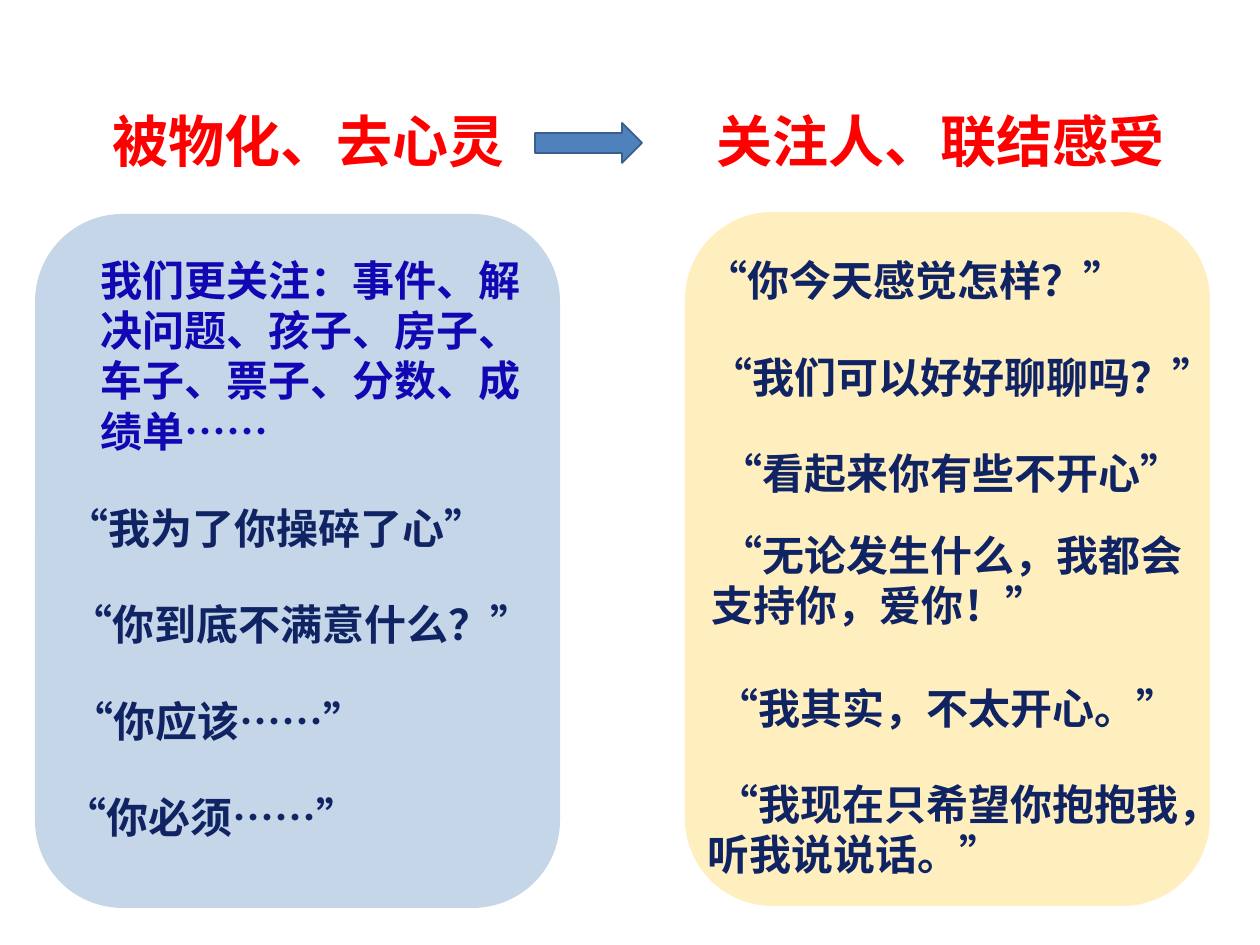
import pptx
import pptx.dml.color
import pptx.enum.shapes
import pptx.enum.text
import pptx.oxml.ns
import pptx.util
import lxml.etree

PX = 914400 // 126
THEME = {
    "font": "Noto Sans CJK SC",
    "heading": ("FF0000", 32),
    "focus": ("1307B3", 24),
    "quote": ("102464", 24),
    "left_panel": "84A8D1",
    "right_panel": "FFDE77",
    "panel_alpha": 47000,
    "arrow": "4F81BD",
    "arrow_line": "3A5F8C",
}
qn = pptx.oxml.ns.qn
rgb = pptx.dml.color.RGBColor.from_string
SHAPES = pptx.enum.shapes.MSO_SHAPE

presentation = pptx.Presentation()
presentation.slide_width = 1260 * PX
presentation.slide_height = 945 * PX
slide = presentation.slides.add_slide(presentation.slide_layouts[6])


def add_filled_shape(kind, left, top, width, height, color):
    shape = slide.shapes.add_shape(kind, left * PX, top * PX, width * PX, height * PX)
    shape.shadow.inherit = False
    shape.fill.solid()
    shape.fill.fore_color.rgb = rgb(color)
    return shape


def add_text(left, top, width, height, style, text):
    color, size = THEME[style]
    box = slide.shapes.add_textbox(left * PX, top * PX, width * PX, height * PX)
    box.text_frame.word_wrap = True
    box.text_frame.auto_size = pptx.enum.text.MSO_AUTO_SIZE.NONE
    paragraph = box.text_frame.paragraphs[0]
    paragraph.text = text
    font = paragraph.font
    font.name = THEME["font"]
    font.size = pptx.util.Pt(size)
    font.bold = True
    font.color.rgb = rgb(color)
    # Chinese glyphs take the East Asian typeface
    defaults = paragraph._p.pPr.find(qn("a:defRPr"))
    lxml.etree.SubElement(defaults, qn("a:ea"), typeface=THEME["font"])


# Translucent panels
for left, top, color in ((685, 212, "right_panel"), (35, 214, "left_panel")):
    panel = add_filled_shape(SHAPES.ROUNDED_RECTANGLE, left, top, 525, 694, THEME[color])
    panel.line.fill.background()
    color_element = panel._element.spPr.find(qn("a:solidFill"))[0]
    lxml.etree.SubElement(color_element, qn("a:alpha"), val=str(THEME["panel_alpha"]))

# Headings and the arrow between them
add_text(100, 100, 452, 149, "heading", "被物化、去心灵")
add_text(704, 100, 522, 149, "heading", "关注人、联结感受")
arrow = add_filled_shape(SHAPES.RIGHT_ARROW, 535, 123, 107, 40, THEME["arrow"])
arrow.line.color.rgb = rgb(THEME["arrow_line"])
arrow.line.width = pptx.util.Pt(1)

# What gets the attention
add_text(88, 248, 476, 217, "focus", "我们更关注：事件、解决问题、孩子、房子、车子、票子、分数、成绩单……")

# Quotes: left, top, width, height, text
quotes = (
    (45, 496, 600, 63, " “我为了你操碎了心”"),
    (49, 592, 919, 63, " “你到底不满意什么？”"),
    (50, 689, 919, 63, " “你应该……”"),
    (43, 785, 919, 63, " “你必须……”"),
    (684, 248, 600, 63, " “你今天感觉怎样？”"),
    (689, 345, 919, 63, " “我们可以好好聊聊吗？”"),
    (699, 441, 524, 63, " “看起来你有些不开心”"),
    (699, 523, 512, 115, " “无论发生什么，我都会支持你，爱你！”"),
    (695, 676, 919, 63, " “我其实，不太开心。”"),
    (695, 772, 549, 115, " “我现在只希望你抱抱我，听我说说话。”"),
)
for left, top, width, height, text in quotes:
    add_text(left, top, width, height, "quote", text)

presentation.save("out.pptx")
